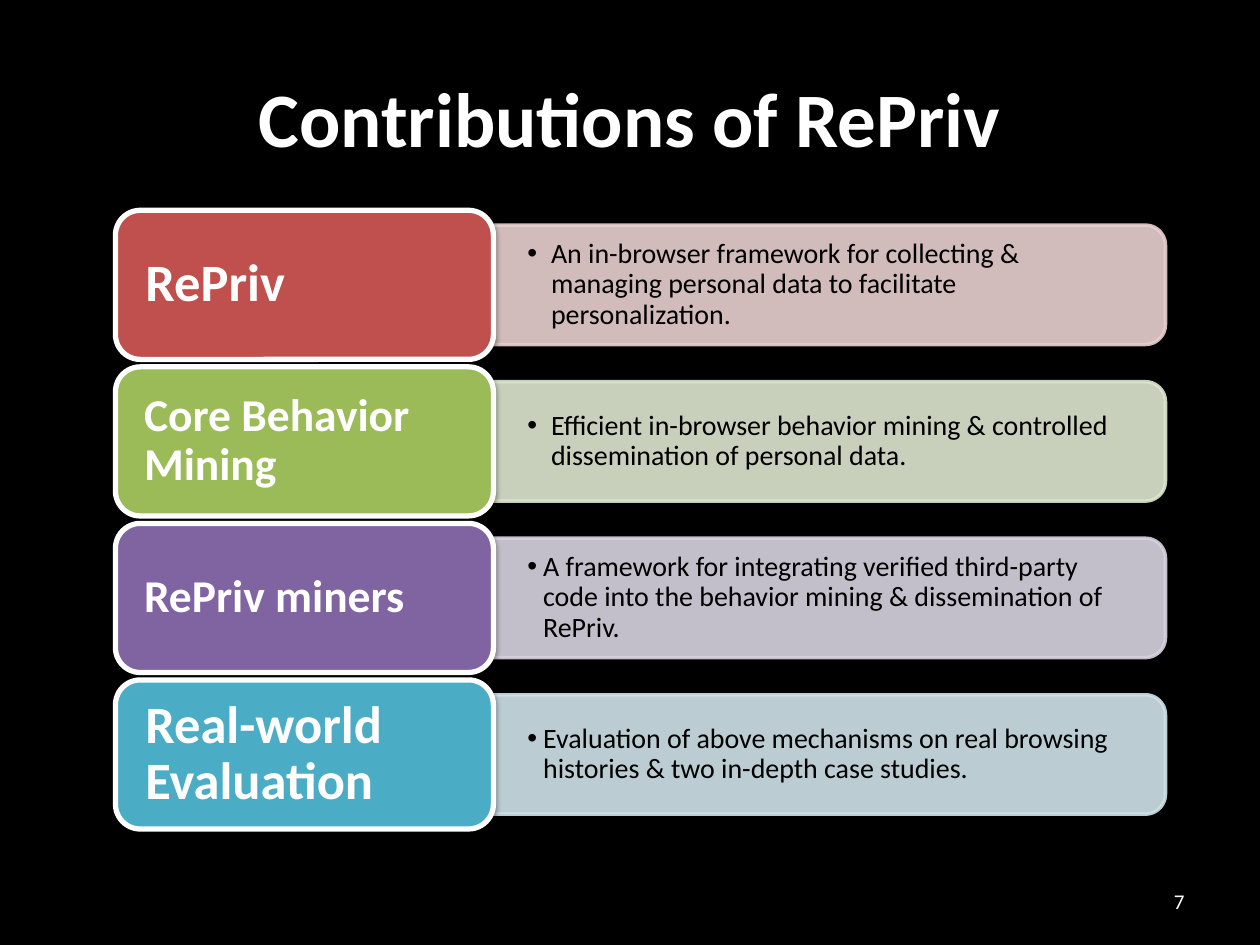
import math

from lxml import etree
from pptx import Presentation
from pptx.dml.color import RGBColor
from pptx.enum.shapes import MSO_SHAPE
from pptx.enum.text import MSO_ANCHOR, PP_ALIGN
from pptx.oxml.ns import qn
from pptx.util import Pt

ROUNDED = MSO_SHAPE.ROUNDED_RECTANGLE
MIDDLE = MSO_ANCHOR.MIDDLE
LEFT, CENTER, RIGHT = PP_ALIGN.LEFT, PP_ALIGN.CENTER, PP_ALIGN.RIGHT

FONT = "Calibri"
COLORS = {
    "background": "000000",
    "light": "FFFFFF",
    "dark": "000000",
    "red": "C0504D",
    "red tint": "E8D0D0",
    "green": "9BBB59",
    "green tint": "DEE7D1",
    "purple": "8064A2",
    "purple tint": "D8D3E0",
    "teal": "4BACC6",
    "teal tint": "D0E3EA",
}

LABEL_LEFT, LABEL_WIDTH, LABEL_HEIGHT = 66, 216, 85.2
DETAIL_LEFT, DETAIL_WIDTH, DETAIL_HEIGHT = 282, 384, 68.2
FIRST_TOP, ROW_PITCH = 120.2, 89.45
CORNER_RADIUS, CORNER_STEPS = 11.4, 12

CONTRIBUTIONS = [
    ("RePriv", 30, "red", 13.5,
     "An in-browser framework for collecting & managing personal data to facilitate personalization."),
    ("Core Behavior Mining", 26, "green", 13.5,
     "Efficient in-browser behavior mining & controlled dissemination of personal data."),
    ("RePriv miners", 26, "purple", 9,
     "A framework for integrating verified third-party code into the behavior mining & dissemination of RePriv."),
    ("Real-world Evaluation", 30, "teal", 9,
     "Evaluation of above mechanisms on real browsing histories & two in-depth case studies."),
]


def color(name):
    return RGBColor.from_string(COLORS[name])


def write_text(shape, text, size, color_name, align, bold=False, insets=(7.2, 3.6, 7.2, 3.6)):
    frame = shape.text_frame
    frame.text = text
    frame.word_wrap = True
    frame.vertical_anchor = MIDDLE
    frame.margin_left, frame.margin_top, frame.margin_right, frame.margin_bottom = map(Pt, insets)
    para = frame.paragraphs[0]
    para.alignment = align
    for span in para.runs:
        span.font.name = FONT
        span.font.size = Pt(size)
        span.font.bold = bold
        span.font.color.rgb = color(color_name)
    return para


def paint(shape, fill_name, line_name, line_width):
    shape.shadow.inherit = False
    shape.fill.solid()
    shape.fill.fore_color.rgb = color(fill_name)
    shape.line.color.rgb = color(line_name)
    shape.line.width = Pt(line_width)


def set_opacity(shape, percent):
    for tint in shape.element.spPr.iter(qn("a:srgbClr")):
        etree.SubElement(tint, qn("a:alpha"), val=str(percent * 1000))


def add_soft_shadow(shape):
    effects = shape.element.spPr.find(qn("a:effectLst"))
    shadow = etree.SubElement(effects, qn("a:outerShdw"), blurRad=str(Pt(3.1)),
                              dist=str(Pt(1.6)), dir="5400000", rotWithShape="0")
    tint = etree.SubElement(shadow, qn("a:srgbClr"), val=COLORS["dark"])
    etree.SubElement(tint, qn("a:alpha"), val="38000")


def add_bullet(para, indent):
    properties = para._p.get_or_add_pPr()
    properties.set("marL", str(Pt(indent)))
    properties.set("indent", str(-Pt(indent)))
    etree.SubElement(properties, qn("a:buFont"), typeface="Arial")
    etree.SubElement(properties, qn("a:buChar"), char="•")


def corner(center_x, center_y, start_degrees):
    angles = [math.radians(start_degrees + 90 * step / CORNER_STEPS)
              for step in range(CORNER_STEPS + 1)]
    return [(Pt(center_x + CORNER_RADIUS * math.cos(angle)),
             Pt(center_y + CORNER_RADIUS * math.sin(angle))) for angle in angles]


def add_detail(page, top, text, tint_name, indent):
    right, bottom = DETAIL_LEFT + DETAIL_WIDTH, top + DETAIL_HEIGHT
    outline = page.shapes.build_freeform(Pt(DETAIL_LEFT), Pt(top))
    outline.add_line_segments(
        corner(right - CORNER_RADIUS, top + CORNER_RADIUS, -90)
        + corner(right - CORNER_RADIUS, bottom - CORNER_RADIUS, 0)
        + [(Pt(DETAIL_LEFT), Pt(bottom))], close=True)
    panel = outline.convert_to_shape()
    paint(panel, tint_name, tint_name, 2)
    set_opacity(panel, 90)
    para = write_text(panel, text, 16, "dark", LEFT, insets=(19.4, 13, 23, 13))
    para.level = 1
    para.line_spacing = 0.9
    add_bullet(para, indent)


def add_label(page, top, text, size, fill_name):
    label = page.shapes.add_shape(ROUNDED, Pt(LABEL_LEFT), Pt(top), Pt(LABEL_WIDTH), Pt(LABEL_HEIGHT))
    paint(label, fill_name, "light", 3)
    add_soft_shadow(label)
    side = 13 if size == 30 else 12.2
    para = write_text(label, text, size, "light", LEFT, True, (side, 8.3, side, 8.3))
    para.line_spacing = 0.9


def add_title(page, text):
    title = page.shapes.title
    title.left, title.top, title.width, title.height = Pt(36), Pt(21.6), Pt(648), Pt(90)
    write_text(title, text, 44, "light", CENTER, True)


def add_page_number(page, text):
    box = page.shapes.add_textbox(Pt(516), Pt(500.5), Pt(168), Pt(28.75))
    write_text(box, text, 12, "light", RIGHT)


def main():
    deck = Presentation()
    deck.slide_width, deck.slide_height = Pt(720), Pt(540)
    page = deck.slides.add_slide(deck.slide_layouts[5])
    page.background.fill.solid()
    page.background.fill.fore_color.rgb = color("background")
    add_title(page, "Contributions of RePriv")
    add_page_number(page, "7")
    for row, (name, size, hue, indent, detail) in enumerate(CONTRIBUTIONS):
        top = FIRST_TOP + row * ROW_PITCH
        add_detail(page, top + (LABEL_HEIGHT - DETAIL_HEIGHT) / 2, detail, f"{hue} tint", indent)
        add_label(page, top, name, size, hue)
    deck.save("out.pptx")


if __name__ == "__main__":
    main()
